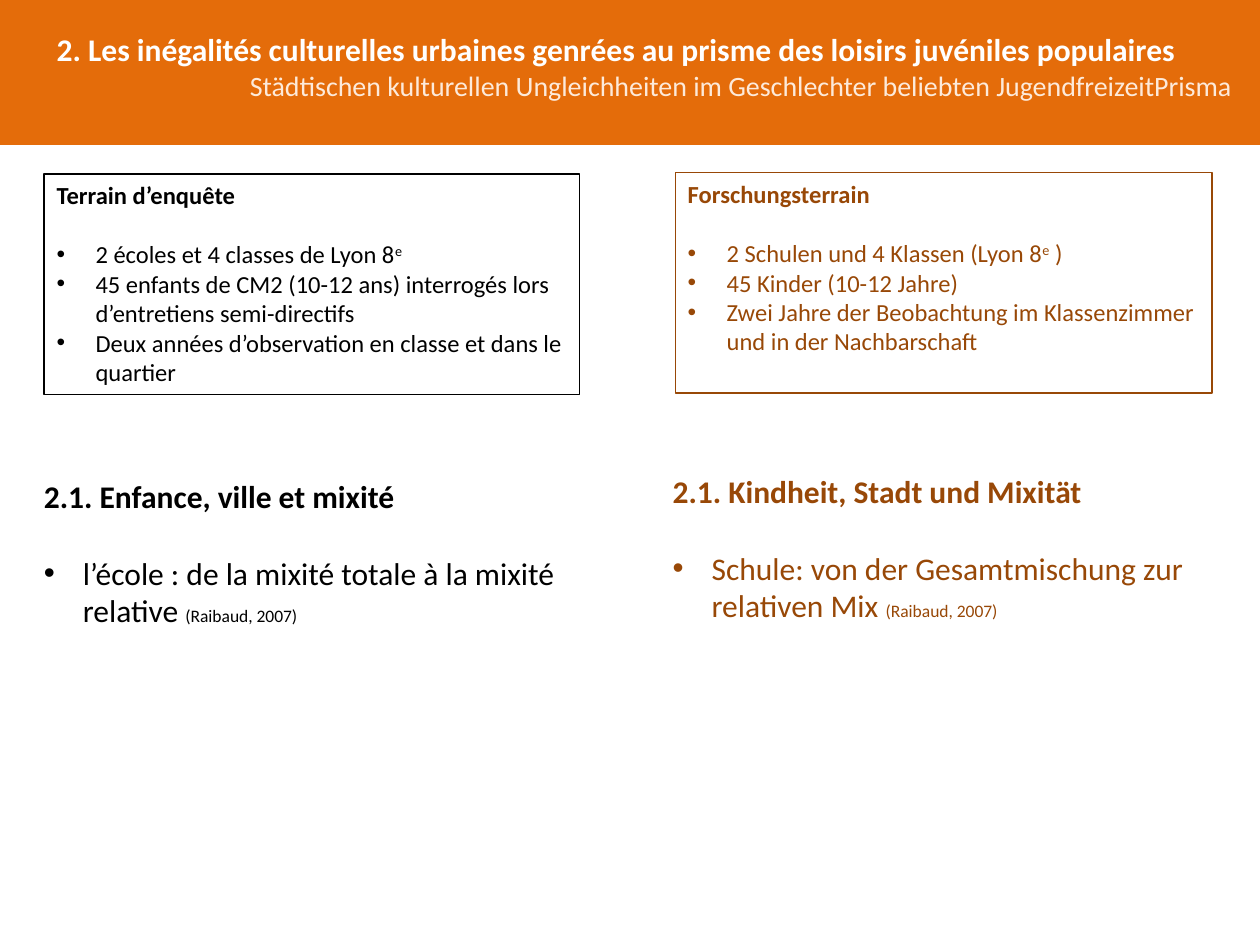
from lxml.etree import SubElement
from pptx import Presentation
from pptx.dml.color import RGBColor
from pptx.enum.shapes import MSO_SHAPE as Shape
from pptx.enum.text import MSO_ANCHOR as Anchor, MSO_AUTO_SIZE as AutoSize, PP_ALIGN as Align
from pptx.oxml.ns import qn
from pptx.util import Inches, Pt

ORANGE, CREAM, WHITE = "E46C0A", "FDEADA", "FFFFFF"
BLACK, BROWN = "000000", "984807"
INDENT = Inches(0.31)
SUPERSCRIPT = {"baseline": 30000}
CITATION = {"size": 10}

# Each block: place, colour, heading, bullets made of (text, format) runs
FIELDWORK = [
    ((0.35, 1.38, 4.25, 1.75), BLACK, "Terrain d’enquête", [
        [("2 écoles et 4 classes de Lyon 8", {}), ("e", SUPERSCRIPT)],
        [("45 enfants de CM2 (10-12 ans) interrogés lors d’entretiens semi-directifs", {})],
        [("Deux années d’observation en classe et dans le quartier", {})],
    ]),
    ((5.36, 1.37, 4.26, 1.75), BROWN, "Forschungsterrain", [
        [("2 Schulen und 4 Klassen (Lyon 8", {}), ("e", SUPERSCRIPT), (" )", {})],
        [("45 Kinder (10-12 Jahre)", {})],
        [("Zwei Jahre der Beobachtung im Klassenzimmer und in der Nachbarschaft", {})],
    ]),
]
SECTIONS = [
    ((0.25, 3.74, 4.76, 3.16), BLACK, "2.1. Enfance, ville et mixité", [
        [("l’école : de la mixité totale à la mixité relative ", {}),
         ("(Raibaud, 2007)", CITATION)],
    ]),
    ((5.24, 3.7, 4.76, 3.16), BROWN, "2.1. Kindheit, Stadt und Mixität", [
        [("Schule: von der Gesamtmischung zur relativen Mix ", {}),
         ("(Raibaud, 2007)", CITATION)],
    ]),
]


def color(value):
    return RGBColor.from_string(value)


def add_run(para, text, size, ink, bold=False, baseline=None):
    run = para.add_run()
    run.text = text
    values = {"name": "Calibri", "size": Pt(size), "bold": bold}
    for name, value in values.items():
        setattr(run.font, name, value)
    run.font.color.rgb = color(ink)
    if baseline:
        run.font._element.set("baseline", str(baseline))


def add_bullet(para):
    props = para._p.get_or_add_pPr()
    props.set("marL", str(INDENT))
    props.set("indent", str(-INDENT))
    SubElement(props, qn("a:buFont"), typeface="Arial")
    SubElement(props, qn("a:buChar"), char="•")


def format_frame(frame, anchor):
    values = {"word_wrap": True, "auto_size": AutoSize.NONE, "vertical_anchor": anchor}
    for name, value in values.items():
        setattr(frame, name, value)


def add_rectangle(slide, place, fill=None, line=None):
    box = slide.shapes.add_shape(Shape.RECTANGLE, *map(Inches, place))
    box.shadow.inherit = False
    if fill:
        box.fill.solid()
        box.fill.fore_color.rgb = color(fill)
    else:
        box.fill.background()
    if line:
        box.line.color.rgb = color(line)
        box.line.width = Pt(0.75)
    else:
        box.line.fill.background()
    return box


def fill_block(box, ink, heading, bullets, size):
    """Write a bold heading, a one-line gap and a bulleted list."""
    frame = box.text_frame
    format_frame(frame, Anchor.TOP)
    para = frame.paragraphs[0]
    para.alignment = Align.LEFT
    add_run(para, heading, size, ink, bold=True)
    for index, runs in enumerate(bullets):
        para = frame.add_paragraph()
        para.alignment = Align.LEFT
        if index == 0:
            para.space_before = Pt(size * 1.22)
        add_bullet(para)
        for text, extra in runs:
            add_run(para, text, **{"size": size, "ink": ink, **extra})


def add_title(slide):
    # Banner goes behind the title placeholder
    banner = add_rectangle(slide, (0, 0, 10, 1.15), fill=ORANGE)
    slide.shapes._spTree.insert(2, banner._element)
    title = slide.shapes.title
    place = zip(("left", "top", "width", "height"), (0.35, -0.1, 9.53, 1.25))
    for name, value in place:
        setattr(title, name, Inches(value))
    frame = title.text_frame
    format_frame(frame, Anchor.MIDDLE)
    french, german = frame.paragraphs[0], frame.add_paragraph()
    french.alignment, german.alignment = Align.LEFT, Align.RIGHT
    add_run(french, "2. Les inégalités culturelles urbaines genrées au prisme "
            "des loisirs juvéniles populaires", 18, WHITE, bold=True)
    add_run(german, "Städtischen kulturellen Ungleichheiten im Geschlechter "
            "beliebten JugendfreizeitPrisma", 16, CREAM)


def main():
    deck = Presentation()
    deck.slide_width, deck.slide_height = Inches(10), Inches(7.5)
    slide = deck.slides.add_slide(deck.slide_layouts[5])
    add_title(slide)

    # Framed fieldwork summaries, French and German
    for place, ink, heading, bullets in FIELDWORK:
        fill_block(add_rectangle(slide, place, line=ink), ink, heading, bullets, 14)

    # Section texts, French and German
    for place, ink, heading, bullets in SECTIONS:
        box = slide.shapes.add_textbox(*map(Inches, place))
        fill_block(box, ink, heading, bullets, 18)

    deck.save("out.pptx")


if __name__ == "__main__":
    main()
